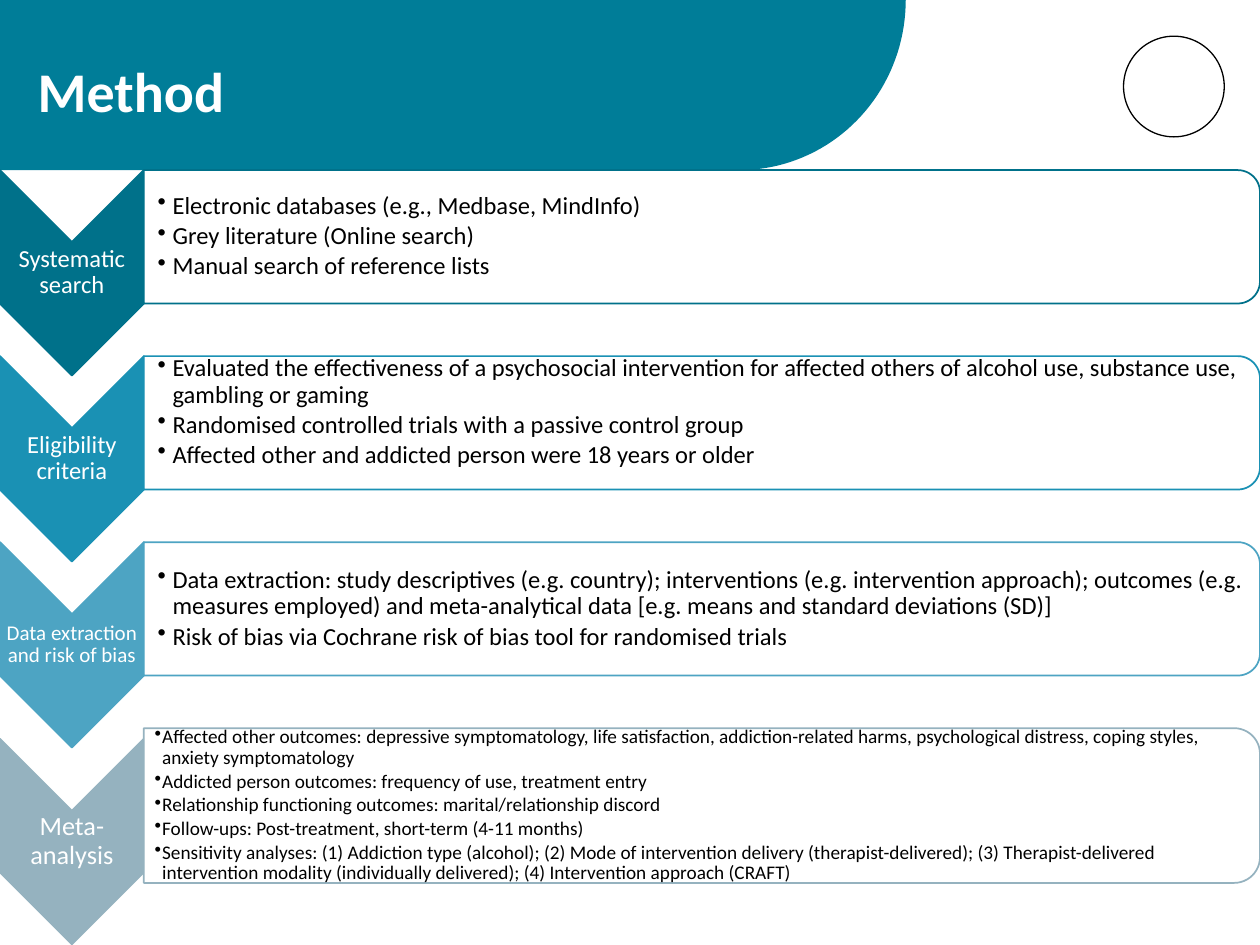
import math

from lxml import etree
from pptx import Presentation
from pptx.dml.color import RGBColor
from pptx.enum import shapes, text
from pptx.oxml import ns
from pptx.util import Cm, Pt

FONT = "Calibri"
HEADER = RGBColor(0x00, 0x7D, 0x98)
WHITE = RGBColor(0xFF, 0xFF, 0xFF)
BLACK = RGBColor(0x00, 0x00, 0x00)
DEEP_TEAL = RGBColor(0x00, 0x71, 0x8A)
TEAL = RGBColor(0x1A, 0x91, 0xB4)
LIGHT_TEAL = RGBColor(0x4D, 0xA4, 0xC3)
GREY_BLUE = RGBColor(0x95, 0xB2, 0xBF)

# Grid of the rows, in centimetres
SLIDE_WIDTH, SLIDE_HEIGHT = 25.4, 19.05
HEADER_HEIGHT = 3.43
ROW_STEP = 3.75
BAR_HEIGHT = 2.69
CHEVRON_WIDTH, CHEVRON_LENGTH = 2.9, 4.14
BAR_WIDTH = SLIDE_WIDTH - CHEVRON_WIDTH

# Label, label size, colour, bar height, text size, indent, bottom inset, points
STEPS = [
    ("Systematic search", 14, DEEP_TEAL, BAR_HEIGHT, 14, 0.3, 0.03, [
        "Electronic databases (e.g., Medbase, MindInfo)",
        "Grey literature (Online search)",
        "Manual search of reference lists",
    ]),
    ("Eligibility criteria", 14, TEAL, BAR_HEIGHT, 14, 0.3, 0.46, [
        "Evaluated the effectiveness of a psychosocial intervention for affected "
        "others of alcohol use, substance use, gambling or gaming",
        "Randomised controlled trials with a passive control group",
        "Affected other and addicted person were 18 years or older",
    ]),
    ("Data extraction and risk of bias", 12, LIGHT_TEAL, BAR_HEIGHT, 14, 0.3, 0.03, [
        "Data extraction: study descriptives (e.g. country); interventions (e.g. "
        "intervention approach); outcomes (e.g. measures employed) and "
        "meta-analytical data [e.g. means and standard deviations (SD)]",
        "Risk of bias via Cochrane risk of bias tool for randomised trials",
    ]),
    ("Meta-analysis", 15, GREY_BLUE, 3.12, 11, 0.15, 0.03, [
        "Affected other outcomes: depressive symptomatology, life satisfaction, "
        "addiction-related harms, psychological distress, coping styles, "
        "anxiety symptomatology",
        "Addicted person outcomes: frequency of use, treatment entry",
        "Relationship functioning outcomes: marital/relationship discord",
        "Follow-ups: Post-treatment, short-term (4-11 months)",
        "Sensitivity analyses: (1) Addiction type (alcohol); (2) Mode of "
        "intervention delivery (therapist-delivered); (3) Therapist-delivered "
        "intervention modality (individually delivered); (4) Intervention "
        "approach (CRAFT)",
    ]),
]


def add_text(slide, box, lines, size, color, insets, anchor=text.MSO_ANCHOR.MIDDLE):
    """Add a text box; box and insets are in centimetres."""
    shape = slide.shapes.add_textbox(*(Cm(value) for value in box))
    frame = shape.text_frame
    frame.word_wrap = True
    frame.vertical_anchor = anchor
    (frame.margin_left, frame.margin_top,
     frame.margin_right, frame.margin_bottom) = (Cm(value) for value in insets)
    frame.text = "\n".join(lines)
    for paragraph in frame.paragraphs:
        paragraph.line_spacing = 0.9
        for run in paragraph.runs:
            run.font.name = FONT
            run.font.size = Pt(size)
            run.font.color.rgb = color
    return frame


def add_bullets(frame, indent, size):
    for paragraph in frame.paragraphs:
        paragraph.level = 1
        paragraph.space_after = Pt(size * 0.15)
        properties = paragraph._p.get_or_add_pPr()
        properties.set("marL", str(Cm(indent)))
        properties.set("indent", str(-Cm(indent)))
        bullet = etree.SubElement(properties, ns.qn("a:buChar"))
        bullet.set("char", "•")


def add_turned_shape(slide, kind, left, top, width, height, fill, line):
    """Add a shape turned by 90 degrees that covers the given area."""
    middle_x, middle_y = left + width / 2, top + height / 2
    shape = slide.shapes.add_shape(
        kind, Cm(middle_x - height / 2), Cm(middle_y - width / 2), Cm(height), Cm(width))
    shape.rotation = 90
    shape.shadow.inherit = False
    shape.fill.solid()
    shape.fill.fore_color.rgb = fill
    shape.line.color.rgb = line
    shape.line.width = Pt(1)
    return shape


def add_header(slide):
    # Band with a rounded lower right corner
    arc_left, radius_x, steps = 14.91, 3.35, 40
    arc = []
    for step in range(steps + 1):
        angle = math.pi / 2 * step / steps
        arc.append((Cm(arc_left + radius_x * math.cos(angle)),
                    Cm(HEADER_HEIGHT * math.sin(angle))))
    builder = slide.shapes.build_freeform(0, 0)
    builder.add_line_segments(arc + [(0, Cm(HEADER_HEIGHT))], close=True)
    band = builder.convert_to_shape()
    band.shadow.inherit = False
    band.fill.solid()
    band.fill.fore_color.rgb = HEADER
    band.line.fill.background()

    # Ring at the right
    ring = slide.shapes.add_shape(
        shapes.MSO_SHAPE.OVAL, Cm(22.65), Cm(0.73), Cm(2.03), Cm(2.03))
    ring.shadow.inherit = False
    ring.fill.background()
    ring.line.color.rgb = BLACK
    ring.line.width = Pt(0.75)

    # Title
    frame = add_text(slide, (0.51, 1.17, 17.75, 2.26), ["Method"], 32, WHITE,
                     (0.25, 0.13, 0.25, 0.13), text.MSO_ANCHOR.TOP)
    frame.paragraphs[0].runs[0].font.bold = True


def add_step(slide, top, label, label_size, color, bar_height, size, indent,
             bottom_inset, points):
    # Chevron with its label, centred on the bar
    chevron_top = top + (bar_height - BAR_HEIGHT) / 2
    add_turned_shape(slide, shapes.MSO_SHAPE.CHEVRON, 0, chevron_top,
                     CHEVRON_WIDTH, CHEVRON_LENGTH, color, color)
    notch = CHEVRON_WIDTH / 2
    frame = add_text(slide, (0, chevron_top + notch, CHEVRON_WIDTH,
                             CHEVRON_LENGTH - 2 * notch),
                     [label], label_size, WHITE, (0.03,) * 4)
    frame.paragraphs[0].alignment = text.PP_ALIGN.CENTER

    # Bar with its bullet points
    bar = add_turned_shape(slide, shapes.MSO_SHAPE.ROUND_2_SAME_RECTANGLE,
                           CHEVRON_WIDTH, top, BAR_WIDTH, bar_height, WHITE, color)
    fill_color = bar.fill._xPr.find(ns.qn("a:solidFill"))[0]
    etree.SubElement(fill_color, ns.qn("a:alpha")).set("val", "90000")
    frame = add_text(slide, (CHEVRON_WIDTH, top + 0.13, BAR_WIDTH - 0.13,
                             bar_height - 0.26),
                     points, size, BLACK, (size * 0.02, 0.03, 0.03, bottom_inset))
    add_bullets(frame, indent, size)


def main():
    presentation = Presentation()
    presentation.slide_width = Cm(SLIDE_WIDTH)
    presentation.slide_height = Cm(SLIDE_HEIGHT)
    slide = presentation.slides.add_slide(presentation.slide_layouts[6])
    add_header(slide)
    for index, step in enumerate(STEPS):
        add_step(slide, HEADER_HEIGHT + index * ROW_STEP, *step)
    presentation.save("out.pptx")


if __name__ == "__main__":
    main()
